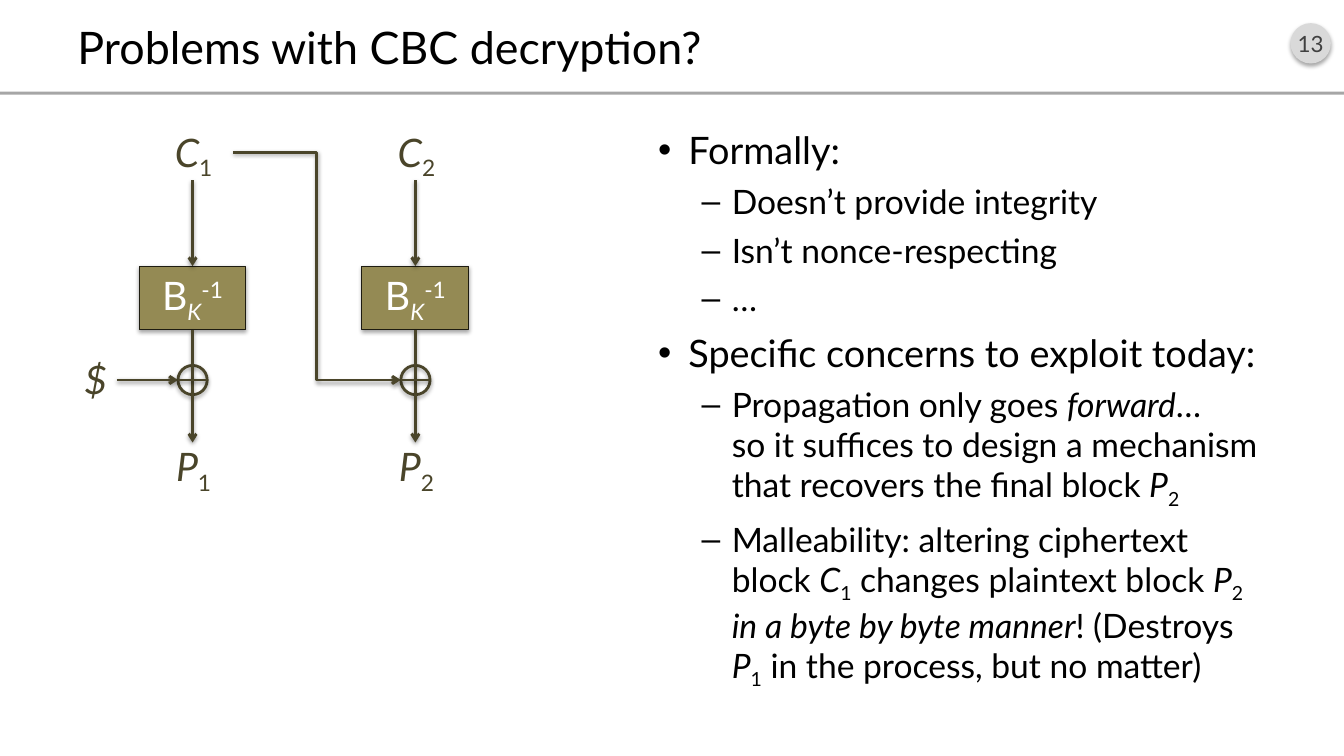
from lxml import etree
from pptx import Presentation
from pptx.dml.color import RGBColor
from pptx.enum.shapes import MSO_CONNECTOR, MSO_SHAPE
from pptx.enum.text import MSO_ANCHOR, PP_ALIGN
from pptx.oxml.ns import qn
from pptx.util import Inches, Pt

RECT, OVAL = MSO_SHAPE.RECTANGLE, MSO_SHAPE.OVAL
LINE, BENT = MSO_CONNECTOR.STRAIGHT, MSO_CONNECTOR.ELBOW
LEFT, MID, RIGHT = PP_ALIGN.LEFT, PP_ALIGN.CENTER, PP_ALIGN.RIGHT
TOP, HALF = MSO_ANCHOR.TOP, MSO_ANCHOR.MIDDLE
COLORS = {"black": "000000", "white": "FFFFFF", "badge": "D9D9D9", "num": "404040",
          "rule": "A6A6A6", "ink": "4A452A", "box": "948A54", "edge": "1E1C11"}
BASE = {"sub": "-25000", "sup": "30000"}

deck = Presentation()
deck.slide_width, deck.slide_height = Inches(13.33), Inches(7.5)
slide = deck.slides.add_slide(deck.slide_layouts[6])
shapes = slide.shapes


def write(par, runs, size, color, align=LEFT):
    par.alignment = align
    for text, *marks in runs:
        if text == "\n":
            par.add_line_break()
            continue
        run = par.add_run()
        run.text = text
        font = run.font
        font.name, font.size = "Lato", Pt(size)
        font.italic = "i" in marks
        font.color.rgb = RGBColor.from_string(COLORS[color])
        for mark in marks:
            if mark in BASE:
                font._element.set("baseline", BASE[mark])


def style(item, color, width, head=False, dist=1.8, alpha=35):
    if color:
        item.line.color.rgb = RGBColor.from_string(COLORS[color])
        item.line.width = Pt(width)
    else:
        item.line.fill.background()
    props = item._element.spPr
    if head:
        etree.SubElement(props.find(qn("a:ln")), qn("a:tailEnd"), type="arrow")
    fx = etree.SubElement(props, qn("a:effectLst"))
    if dist:
        cast = etree.SubElement(fx, qn("a:outerShdw"), blurRad=str(Pt(3.1)),
                                dist=str(Pt(dist)), dir="5400000", rotWithShape="0")
        tint = etree.SubElement(cast, qn("a:srgbClr"), val=COLORS["black"])
        etree.SubElement(tint, qn("a:alpha"), val=str(alpha * 1000))


mids = [1.91, 4.12]
tops = {"C": 1.22, "P": 4.34}
mix = 3.77
rad = 0.145

solids = [
    (OVAL, 12.8, 0.23, 0.4, 0.4, "badge", None, 0, 1.8, [("13",)], 16, "num"),
    (RECT, 0, 0.91, 13.33, 0.03, "rule", None, 0, 0, [], 16, "num"),
]
texts = [
    (0.67, 0.16, 12, 0.6, [("Problems with CBC decryption?",)], 32, "black", LEFT, HALF),
    (0.7, 3.48, 0.46, 0.57, [("$", "i")], 28, "ink", RIGHT, TOP),
]
wires = [(LINE, 1.16, mix, mids[0] - rad, mix, True),
         (BENT, 2.31, 1.51, mids[1] - rad, mix, True)]
cipher = [("B",), ("K", "i", "sub"), ("-1", "sup")]
for num, mid in enumerate(mids, 1):
    solids += [
        (RECT, mid - 0.53, 2.64, 1.06, 0.63, "box", "edge", 0.75, 1.8, cipher, 28, "white"),
        (OVAL, mid - rad, mix - rad, 2 * rad, 2 * rad, None, "ink", 2, 1.8, [], 28, "ink"),
    ]
    wires += [(LINE, mid, 1.79, mid, 2.64, True),
              (LINE, mid, 3.27, mid, 4.39, True),
              (LINE, mid - rad, mix, mid + rad, mix, False)]
    for name, top in tops.items():
        runs = [(name, "i"), (str(num), "sub")]
        texts.append((mid - 0.38, top, 0.78, 0.57, runs, 28, "ink", MID, TOP))

for kind, left, top, wide, high, fill, edge, width, dist, runs, size, color in solids:
    item = shapes.add_shape(kind, Inches(left), Inches(top), Inches(wide), Inches(high))
    if fill:
        item.fill.solid()
        item.fill.fore_color.rgb = RGBColor.from_string(COLORS[fill])
    else:
        item.fill.background()
    style(item, edge, width, dist=dist)
    if runs:
        frame = item.text_frame
        frame.margin_left = frame.margin_right = 0
        frame.vertical_anchor = HALF
        write(frame.paragraphs[0], runs, size, color, MID)

for kind, left, top, right, low, head in wires:
    wire = shapes.add_connector(kind, Inches(left), Inches(top), Inches(right), Inches(low))
    style(wire, "ink", 2, head, 1.6, 38)

for left, top, wide, high, runs, size, color, align, anchor in texts:
    frame = shapes.add_textbox(Inches(left), Inches(top), Inches(wide), Inches(high)).text_frame
    frame.word_wrap = True
    frame.vertical_anchor = anchor
    write(frame.paragraphs[0], runs, size, color, align)

points = [
    (0, [("Formally:",)]),
    (1, [("Doesn’t provide integrity",)]),
    (1, [("Isn’t nonce-respecting",)]),
    (1, [("…",)]),
    (0, [("Specific concerns to exploit today:",)]),
    (1, [("Propagation only goes ",), ("forward", "i"), ("…",), ("\n",),
         ("so it suffices to design a mechanism that recovers the final block ",),
         ("P", "i"), ("2", "sub")]),
    (1, [("Malleability: altering ciphertext block ",), ("C", "i"), ("1", "sub"),
         (" changes plaintext block ",), ("P", "i"), ("2 ", "sub"),
         ("in a byte by byte manner", "i"), ("! (Destroys ",), ("P", "i"), ("1", "sub"),
         (" in the process, but no matter)",)]),
]
levels = [(0.3, "•", 27, 8), (0.73, "–", 24, 6)]
body = shapes.add_textbox(Inches(6.43), Inches(1.21), Inches(6.24), Inches(5.75)).text_frame
body.word_wrap = True
for row, (level, runs) in enumerate(points):
    indent, sign, size, gap = levels[level]
    par = body.add_paragraph() if row else body.paragraphs[0]
    par.level = level
    if row:
        par.space_before = Pt(gap)
    props = par._p.get_or_add_pPr()
    props.set("marL", str(Inches(indent)))
    props.set("indent", str(Inches(-0.3)))
    etree.SubElement(props, qn("a:buFont"), typeface="Arial")
    etree.SubElement(props, qn("a:buChar"), char=sign)
    write(par, runs, size, "black")

deck.save("out.pptx")
